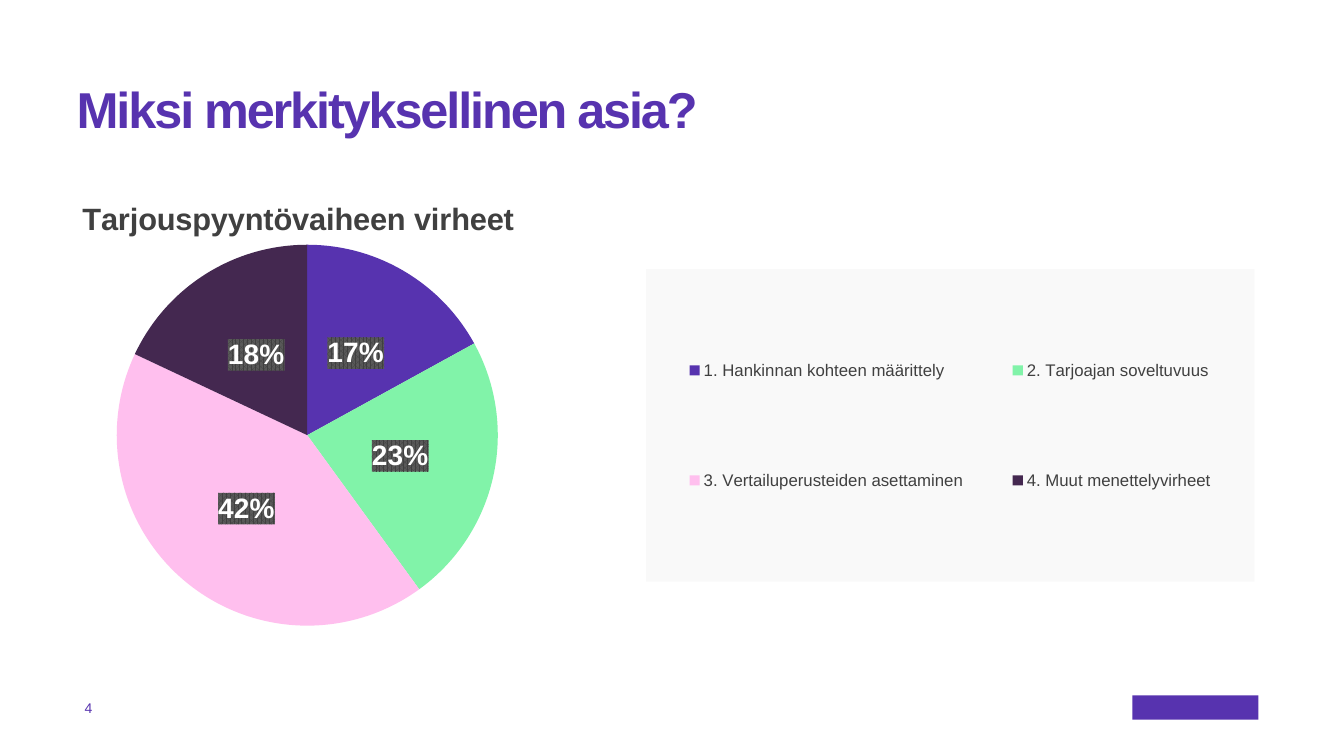
"""Build a slide with a pie chart of errors in the call for tenders."""
from lxml import etree
from pptx import Presentation
from pptx.chart.data import CategoryChartData as ChartData
from pptx.dml.color import RGBColor
from pptx.enum.chart import XL_CHART_TYPE as Kind, XL_LABEL_POSITION as Spot
from pptx.enum.chart import XL_LEGEND_POSITION as Side
from pptx.enum.shapes import MSO_SHAPE as Form
from pptx.enum.text import MSO_ANCHOR as Anchor, MSO_AUTO_SIZE as Fit, PP_ALIGN as Align
from pptx.util import Inches, Pt

TITLE = "Miksi merkityksellinen asia?"
HEAD = "Tarjouspyyntövaiheen virheet"
PAGE = "4"
PARTS = [
    ("1. Hankinnan kohteen määrittely", 17, "5733AF"),
    ("2. Tarjoajan soveltuvuus", 23, "81F3A9"),
    ("3. Vertailuperusteiden asettaminen", 42, "FFBFEE"),
    ("4. Muut menettelyvirheet", 18, "442850"),
]
FONT, PURPLE, GREY, WHITE = "Arial", "5733AF", "404040", "FFFFFF"
AREA = (0.68, 1.78, 11.81, 4.57)
PIE = (1.07, 2.43, 3.96, 3.78)
KEY = (6.41, 2.67, 6.03, 3.1)
NS = {
    "c": "http://schemas.openxmlformats.org/drawingml/2006/chart",
    "a": "http://schemas.openxmlformats.org/drawingml/2006/main",
}


def color(code):
    return RGBColor.from_string(code)


def style(font, size, code, bold=False):
    font.name, font.size, font.bold = FONT, Pt(size), bold
    font.color.rgb = color(code)


def write(frame, text, size=10, code=PURPLE, bold=False, anchor=Anchor.TOP,
          line=None, track=None):
    frame.margin_left = frame.margin_right = 0
    frame.margin_top = frame.margin_bottom = 0
    frame.word_wrap, frame.auto_size = True, Fit.NONE
    frame.vertical_anchor = anchor
    para = frame.paragraphs[0]
    para.alignment, para.line_spacing = Align.LEFT, line
    run = para.add_run()
    run.text = text
    style(run.font, size, code, bold)
    if track:
        run.font._element.set("spc", str(int(track * 100)))


def node(body):
    spaces = " ".join(f'xmlns:{key}="{uri}"' for key, uri in NS.items())
    return etree.fromstring(f"<c:box {spaces}>{body}</c:box>")[0]


def find(root, query):
    return root.xpath(query)[0]


def layout(box, inner=False):
    left, top, wide, high = AREA
    rule = [("x", (box[0] - left) / wide), ("y", (box[1] - top) / high)]
    modes = ["x", "y"]
    if len(box) == 4:
        rule += [("w", box[2] / wide), ("h", box[3] / high)]
    body = '<c:layoutTarget val="inner"/>' if inner else ""
    body += "".join(f'<c:{key}Mode val="edge"/>' for key in modes)
    body += "".join(f'<c:{key} val="{val:.3f}"/>' for key, val in rule)
    return node(f"<c:layout><c:manualLayout>{body}</c:manualLayout></c:layout>")


def fill(kind):
    return node(f"<c:spPr>{kind}<a:ln><a:noFill/></a:ln></c:spPr>")


def solid(code):
    return f'<a:solidFill><a:srgbClr val="{code}"/></a:solidFill>'


def pattern(fore, back):
    return (f'<a:pattFill prst="pct75"><a:fgClr><a:srgbClr val="{fore}"/></a:fgClr>'
            f'<a:bgClr><a:srgbClr val="{back}"/></a:bgClr></a:pattFill>')


def draw(slide):
    data = ChartData()
    data.categories = [name for name, _, _ in PARTS]
    data.add_series("Series 1", [val for _, val, _ in PARTS])
    chart = slide.shapes.add_chart(Kind.PIE, *map(Inches, AREA), data).chart
    style(chart.font, 10, "000000")

    chart.has_title = True
    run = chart.chart_title.text_frame.paragraphs[0].add_run()
    run.text = HEAD
    style(run.font, 22, GREY, True)

    chart.has_legend = True
    chart.legend.position = Side.RIGHT
    chart.legend.include_in_layout = False
    style(chart.legend.font, 12, GREY)

    plot = chart.plots[0]
    plot.vary_by_categories = True
    for spot, (_, _, code) in enumerate(PARTS):
        form = plot.series[0].points[spot].format
        form.fill.solid()
        form.fill.fore_color.rgb = color(code)
        form.line.fill.background()

    tags = plot.series[0].data_labels
    tags.show_percentage, tags.show_value = True, False
    tags.number_format, tags.number_format_is_linked = "0%", False
    tags.position = Spot.CENTER
    style(tags.font, 20, WHITE, True)

    root = chart.element
    for old in root.xpath(".//c:layout"):
        old.getparent().remove(old)
    find(root, ".//c:title/c:tx").addnext(layout((0.76, 1.92)))
    find(root, ".//c:plotArea").insert(0, layout(PIE, inner=True))
    find(root, ".//c:legendPos").addnext(layout(KEY))
    find(root, ".//c:legend/c:txPr").addprevious(fill(solid("F9F9F9")))
    find(root, ".//c:ser/c:dLbls/c:numFmt").addnext(fill(pattern(GREY, "595959")))


def main():
    deck = Presentation()
    deck.slide_width, deck.slide_height = Inches(13.33), Inches(7.5)
    slide = deck.slides.add_slide(deck.slide_layouts[5])

    mark = slide.shapes.add_shape(
        Form.RECTANGLE, *map(Inches, (11.23, 6.9, 1.25, 0.24)))
    mark.shadow.inherit = False
    mark.fill.solid()
    mark.fill.fore_color.rgb = color(PURPLE)
    mark.line.fill.background()

    title = slide.shapes.title
    title.left, title.top, title.width, title.height = map(
        Inches, (0.76, 0.84, 11.34, 0.79))
    write(title.text_frame, TITLE, size=36, bold=True, line=0.9, track=-1.5)

    page = slide.shapes.add_textbox(*map(Inches, (0.84, 6.9, 0.47, 0.24)))
    write(page.text_frame, PAGE, anchor=Anchor.MIDDLE)
    draw(slide)
    deck.save("out.pptx")


if __name__ == "__main__":
    main()
